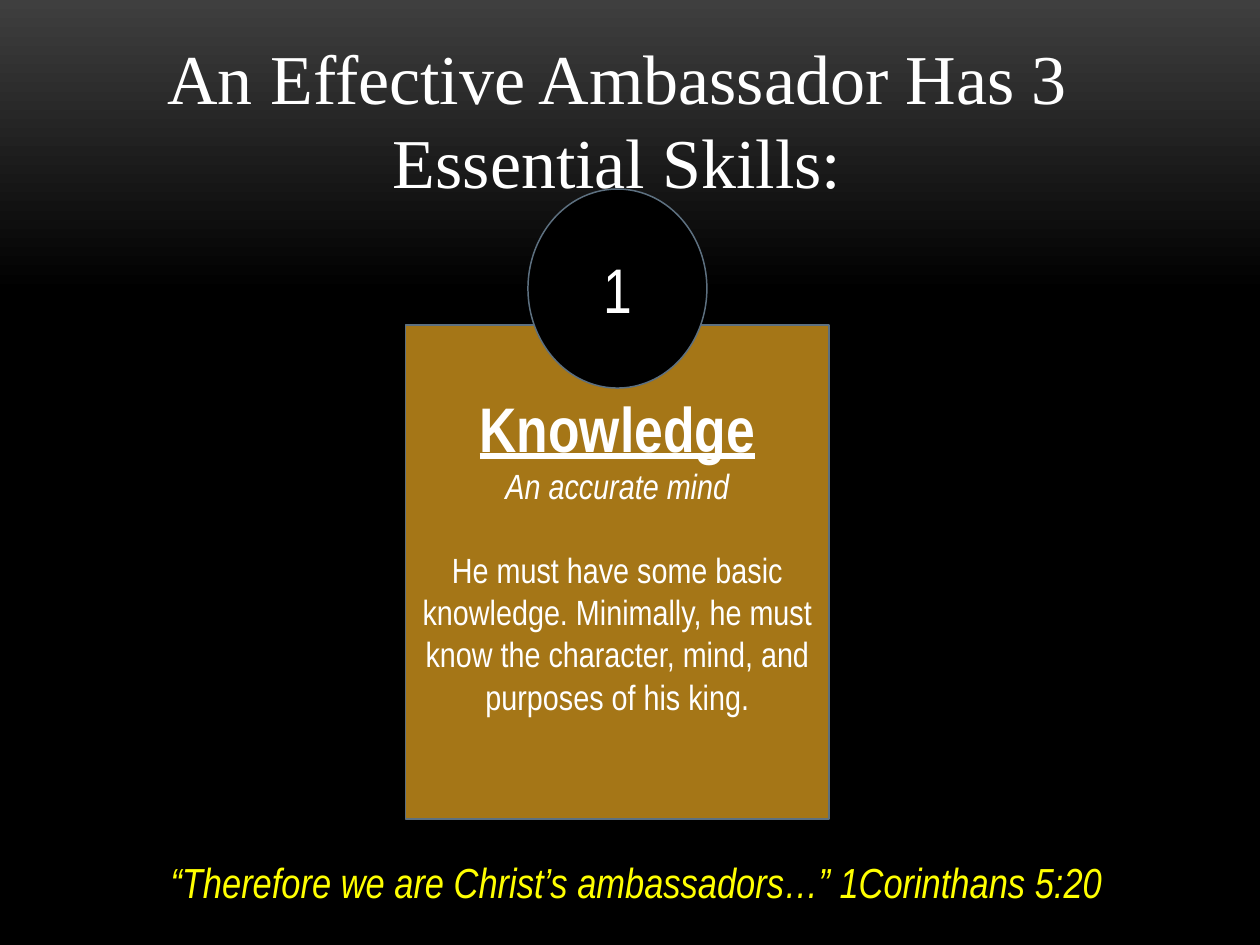
from pptx import Presentation
from pptx.dml.color import RGBColor
from pptx.enum.shapes import MSO_SHAPE
from pptx.enum.text import MSO_ANCHOR, PP_ALIGN
from pptx.util import Inches, Pt

# Content: text, size and style of each paragraph
HEAD = "An Effective Ambassador Has 3 Essential Skills:"
SKILL = [
    ("Knowledge", dict(size=36, bold=True, underline=True)),
    ("An accurate mind", dict(size=20, italic=True)),
    ("He must have some basic knowledge. Minimally, he must know the "
     "character, mind, and purposes of his king.", dict(size=20, before=24)),
]
BADGE = [("1", dict(size=36))]
VERSE = [("“Therefore we are Christ’s ambassadors…” 1Corinthans 5:20",
          dict(size=24, italic=True, color="verse", align=PP_ALIGN.LEFT))]

COLORS = dict(glow="3F3F3F", night="000000", gold="A57617",
              edge="5D7080", text="FFFFFF", verse="FFFF00")
SERIF, SANS = "Times New Roman", "Arial Narrow"
WIDE, HIGH = 10, 7.5
MID = 4.9  # shared centre line of title, card and badge


def tint(name):
    return RGBColor.from_string(COLORS[name])


def box(mid, top, wide, high):
    return [Inches(v) for v in (mid - wide / 2, top, wide, high)]


def style(para, size, face=SANS, color="text", align=PP_ALIGN.CENTER,
          before=0, bold=False, italic=False, underline=False):
    para.alignment = align
    para.space_before = Pt(before)
    font = para.font
    font.name, font.size = face, Pt(size)
    font.bold, font.italic, font.underline = bold, italic, underline
    font.color.rgb = tint(color)


def write(frame, lines):
    frame.word_wrap = True
    for i, (text, look) in enumerate(lines):
        para = frame.add_paragraph() if i else frame.paragraphs[0]
        para.text = text
        style(para, **look)


def panel(kind, place, fill, lines, anchor):
    shape = slide.shapes.add_shape(kind, *place)
    shape.shadow.inherit = False
    shape.fill.solid()
    shape.fill.fore_color.rgb = tint(fill)
    shape.line.color.rgb = tint("edge")
    shape.line.width = Pt(0.85)
    shape.text_frame.vertical_anchor = anchor
    write(shape.text_frame, lines)
    return shape


deck = Presentation()
deck.slide_width, deck.slide_height = Inches(WIDE), Inches(HIGH)
slide = deck.slides.add_slide(deck.slide_layouts[5])

# Background: a glow fading down from the top edge
back = slide.background.fill
back.gradient()
back.gradient_angle = 270
for stop, (name, spot) in zip(back.gradient_stops,
                              [("glow", 0), ("night", 0.31)]):
    stop.color.rgb = tint(name)
    stop.position = spot

# Title
title = slide.shapes.title
title.left, title.top, title.width, title.height = box(MID, 0.22, 8.88, 1.45)
title.text_frame.vertical_anchor = MSO_ANCHOR.TOP
write(title.text_frame, [(HEAD, dict(size=40, face=SERIF))])
title.text_frame.paragraphs[0].line_spacing = Pt(48)

# Skill card, with room at its top for the badge
card = panel(MSO_SHAPE.RECTANGLE, box(MID, 2.58, 3.36, 3.92), "gold",
             SKILL, MSO_ANCHOR.TOP)
card.text_frame.margin_top = Inches(0.51)

# Number badge
panel(MSO_SHAPE.OVAL, box(MID, 1.5, 1.42, 1.58), "night",
      BADGE, MSO_ANCHOR.MIDDLE)

# Verse
verse = slide.shapes.add_textbox(*box(5.1, 6.75, 7.69, 0.5))
write(verse.text_frame, VERSE)

deck.save("out.pptx")
